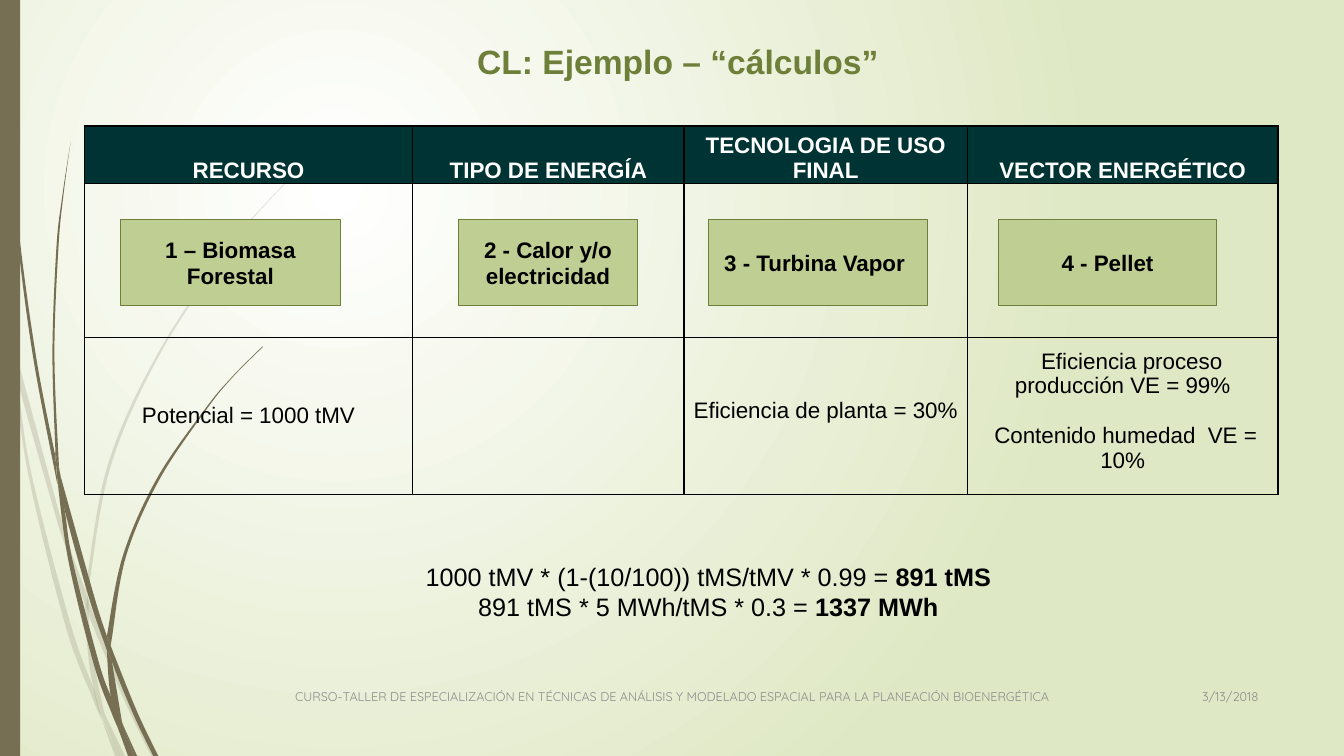
from collections import namedtuple
from dataclasses import dataclass

from lxml.etree import SubElement
from pptx import Presentation
from pptx.dml.color import RGBColor
from pptx.enum.shapes import MSO_SHAPE
from pptx.enum.text import MSO_ANCHOR, PP_ALIGN
from pptx.oxml import parse_xml
from pptx.oxml.ns import nsdecls, qn
from pptx.util import Inches, Pt

Box = namedtuple("Box", "left top width height")


@dataclass(frozen=True)
class Theme:
    white: str = "FFFFFF"
    black: str = "000000"
    mist: str = "DFE8C4"
    bark: str = "766F54"
    header: str = "003333"
    leaf: str = "BFCE92"
    olive: str = "6D7F39"
    gray: str = "8C8C8C"
    font: str = "Arial"
    footer_font: str = "Quicksand"
    title_size: int = 24
    formula_size: int = 18
    body_size: int = 16
    footer_size: int = 9


THEME = Theme()

# Grass pieces: the two curved edges of each, in drawing order
PALE_GRASS = [
    ([(0.11, 3.5), (0.09, 3.22), (0, 2.82)], [(0, 2.99), (0.1, 3.44)]),
    ([(0.58, 5.22), (0.84, 5.99)], [(0.85, 5.86), (0.62, 5.2), (0.14, 3.45), (0.17, 3.76), (0.58, 5.22)]),
    ([(0.88, 5.96), (0.88, 6.1), (1.23, 6.94), (1.5, 7.5)], [(1.55, 7.5), (1.27, 6.92), (0.92, 6.07)]),
    ([(1.19, 7.5), (1.24, 7.5)], [(1.05, 7.11)]),
    ([(0.93, 6.83), (0.7, 6.19), (0.31, 4.69), (0.17, 3.76), (0.11, 3.5)],
     [(0.11, 3.5), (0.28, 4.7), (0.65, 6.21), (0.92, 6.93), (1.01, 7.14)]),
    ([(0.84, 5.99), (0.87, 6.46), (0.93, 6.83), (1.05, 7.11)], [(1.03, 7.06), (0.91, 6.46), (0.88, 6.1)]),
    ([(0.88, 5.96), (0.88, 5.84), (1.1, 4.62), (1.6, 3.49), (2.29, 2.45), (2.68, 1.98), (3.12, 1.54)],
     [(3.12, 1.53), (2.68, 1.97), (2.28, 2.44), (1.58, 3.48), (1.07, 4.61), (0.85, 5.84)]),
    ([(1.01, 7.14), (1.14, 7.5)], [(1.19, 7.5)]),
    ([(0.88, 6.08), (0.88, 5.96)], [(0.85, 5.86), (0.84, 5.99)]),
    ([(0.96, 6.92), (0.93, 6.83), (0.99, 7.07), (1.19, 7.5)], [(1.19, 7.5), (1.05, 7.11)]),
]
DARK_GRASS = [
    ([(0.03, 0), (0.07, 1.1), (0.17, 2.33), (0.33, 3.55), (0.57, 4.81)],
     [(0.55, 4.53), (0.36, 3.55), (0.19, 2.32), (0.08, 1.09), (0.04, 0)]),
    ([(0.6, 4.72), (0.64, 5.05), (0.88, 5.92), (1.06, 6.45)], [(1.06, 6.31), (0.93, 5.9), (0.6, 4.72)]),
    ([(1.1, 6.41), (1.11, 6.56), (1.32, 7.08), (1.52, 7.5)], [(1.57, 7.5), (1.36, 7.06), (1.13, 6.49)]),
    ([(1.1, 6.91), (0.98, 6.57), (0.72, 5.56), (0.64, 5.05), (0.57, 4.77)],
     [(0.57, 4.77), (0.68, 5.57), (0.93, 6.59), (1.11, 7.08), (1.17, 7.22)]),
    ([(0.6, 4.72), (0.58, 4.53), (0.54, 3.49), (0.58, 2.45), (0.63, 1.93), (0.7, 1.41)],
     [(0.7, 1.41), (0.62, 1.93), (0.56, 2.45), (0.52, 3.49), (0.55, 4.49)]),
    ([(1.33, 7.5), (1.36, 7.5)], [(1.22, 7.19)]),
    ([(0.57, 4.77), (0.64, 5.05)], [(0.6, 4.72), (0.55, 4.49), (0.55, 4.53)]),
    ([(1.1, 6.41), (1.11, 6.33), (1.25, 5.52), (1.58, 4.76), (2.05, 4.06), (2.31, 3.74), (2.61, 3.44)],
     [(2.6, 3.44), (2.31, 3.73), (2.04, 4.05), (1.56, 4.74), (1.22, 5.51), (1.06, 6.31)]),
    ([(1.17, 7.22), (1.27, 7.5)], [(1.31, 7.5)]),
    ([(1.06, 6.45), (1.1, 6.91), (1.22, 7.19)], [(1.21, 7.16), (1.11, 6.56)]),
    ([(1.06, 6.45), (1.11, 6.56)], [(1.1, 6.41), (1.06, 6.31)]),
    ([(1.16, 7.06), (1.1, 6.91), (1.17, 7.22), (1.3, 7.5)], [(1.33, 7.5), (1.22, 7.19)]),
]

ROW_HEIGHTS = [0.57, 1.53, 1.56]
# Width, header and paragraphs (text, first-line indent) of each column
COLUMNS = [
    (3.26, "RECURSO", [("Potencial = 1000 tMV", 0)]),
    (2.69, "TIPO DE ENERGÍA", []),
    (2.81, "TECNOLOGIA DE USO FINAL", [("Eficiencia de planta = 30%", 0)]),
    (3.08, "VECTOR ENERGÉTICO", [("Eficiencia proceso producción VE = 99%", 0.18),
                                 ("Contenido humedad  VE = 10%", 0.06)]),
]
# Label, offset from the table's left edge and width of each step
STEPS = [("1 – Biomasa Forestal", 0.36, 2.18), ("2 - Calor y/o electricidad", 3.71, 1.78),
         ("3 - Turbina Vapor ", 6.19, 2.17), ("4 - Pellet", 9.07, 2.16)]
FORMULAS = [("1000 tMV * (1-(10/100)) tMS/tMV * 0.99 = ", "891 tMS"),
            ("891 tMS * 5 MWh/tMS * 0.3 = ", "1337 MWh")]


def inches(box):
    return [Inches(value) for value in box]


def write(paragraph, text, size, ink=THEME.black, bold=False, name=THEME.font, align=PP_ALIGN.CENTER):
    paragraph.alignment = align
    run = paragraph.add_run()
    run.text = text
    for attribute, value in {"size": Pt(size), "bold": bold, "name": name}.items():
        setattr(run.font, attribute, value)
    run.font.color.rgb = RGBColor.from_string(ink)


def next_paragraph(frame, position):
    return frame.add_paragraph() if position else frame.paragraphs[0]


def paint(shape, fill, line=None, alpha=None):
    shape.shadow.inherit = False
    shape.fill.solid()
    shape.fill.fore_color.rgb = RGBColor.from_string(fill)
    if alpha:
        SubElement(shape.fill._xPr.find(".//" + qn("a:srgbClr")), qn("a:alpha"), val=str(alpha * 1000))
    if line:
        shape.line.color.rgb = RGBColor.from_string(line)
        shape.line.width = Pt(0.75)
    else:
        shape.line.fill.background()


def add_background(slide):
    fill = slide.background.fill
    fill.gradient()
    for stop, value in zip(fill.gradient_stops, (THEME.white, THEME.mist)):
        stop.color.rgb = RGBColor.from_string(value)
    linear = slide.background._cSld.find(".//" + qn("a:lin"))
    linear.getparent().replace(linear, parse_xml(
        f'<a:path {nsdecls("a")} path="circle">'
        '<a:fillToRect l="50000" t="50000" r="100000" b="100000"/></a:path>'))


def bend(shape, edges):
    """Turn the straight segments along each edge into Bezier curves."""
    segments = list(shape._element.iter(qn("a:moveTo"), qn("a:lnTo")))
    points = [(int(s[0].get("x")), int(s[0].get("y"))) for s in segments]
    start = 0
    for edge in edges:
        last = start + len(edge) - 1
        for i in range(start + 1, last + 1):
            before, a, b, after = (points[k] for k in (max(i - 2, start), i - 1, i, min(i + 1, last)))
            first = [p + (r - q) / 6 for p, q, r in zip(a, before, b)]
            second = [p - (r - q) / 6 for p, q, r in zip(b, a, after)]
            curve = SubElement(segments[i].getparent(), qn("a:cubicBezTo"))
            for x, y in (first, second, b):
                SubElement(curve, qn("a:pt"), x=str(round(x)), y=str(round(y)))
            segments[i].getparent().replace(segments[i], curve)
        start = last + 1


def add_grass(slide, box):
    for pieces, alpha in ((PALE_GRASS, 20), (DARK_GRASS, None)):
        for edges in pieces:
            outline = [(Inches(box.left + x), Inches(box.top + y)) for edge in edges for x, y in edge]
            builder = slide.shapes.build_freeform(*outline[0])
            builder.add_line_segments(outline[1:], close=True)
            piece = builder.convert_to_shape()
            bend(piece, edges)
            paint(piece, THEME.bark, alpha=alpha)
    bar = slide.shapes.add_shape(MSO_SHAPE.RECTANGLE, *inches(box._replace(width=0.2)))
    paint(bar, THEME.bark)


def add_title(slide, box):
    title = slide.shapes.title
    for attribute, value in zip(box._fields, inches(box)):
        setattr(title, attribute, value)
    title.text_frame.vertical_anchor = MSO_ANCHOR.BOTTOM
    write(title.text_frame.paragraphs[0], "CL: Ejemplo – “cálculos” ", THEME.title_size, THEME.olive, True)


def format_cell(cell, fill=None, anchor=MSO_ANCHOR.MIDDLE, bottom=0):
    formats = {"margin_left": Inches(0.05), "margin_right": Inches(0.05), "margin_top": 0,
               "margin_bottom": Inches(bottom), "vertical_anchor": anchor}
    for attribute, value in formats.items():
        setattr(cell, attribute, value)
    cell.fill.background()
    if fill:
        cell.fill.solid()
        cell.fill.fore_color.rgb = RGBColor.from_string(fill)
    for index, side in enumerate("LRTB"):
        cell._tc.get_or_add_tcPr().insert(index, parse_xml(
            f'<a:ln{side} {nsdecls("a")} w="12700"><a:solidFill>'
            f'<a:srgbClr val="{THEME.black}"/></a:solidFill></a:ln{side}>'))


def add_energy_table(slide, box):
    table = slide.shapes.add_table(len(ROW_HEIGHTS), len(COLUMNS), *inches(box)).table
    table.first_row = table.horz_banding = False
    for row, height in zip(table.rows, ROW_HEIGHTS):
        row.height = Inches(height)
    for index, (width, header, entries) in enumerate(COLUMNS):
        table.columns[index].width = Inches(width)
        top, middle, bottom = (table.cell(row, index) for row in range(3))
        format_cell(top, THEME.header, MSO_ANCHOR.BOTTOM)
        format_cell(middle)
        format_cell(bottom, bottom=0.1 if index else 0)
        write(top.text_frame.paragraphs[0], header, THEME.body_size, THEME.white, True)
        for position, (text, indent) in enumerate(entries):
            paragraph = next_paragraph(bottom.text_frame, position)
            paragraph.space_before = Pt(18 if position else 0)
            paragraph._p.get_or_add_pPr().set("indent", str(Inches(indent)))
            write(paragraph, text, THEME.body_size)
    # Step boxes over the middle row
    for label, offset, width in STEPS:
        step = slide.shapes.add_shape(
            MSO_SHAPE.RECTANGLE, *inches(Box(box.left + offset, box.top + 0.93, width, 0.85)))
        paint(step, THEME.leaf, THEME.olive)
        step.text_frame.vertical_anchor = MSO_ANCHOR.MIDDLE
        write(step.text_frame.paragraphs[0], label, THEME.body_size, bold=True)


def add_formulas(slide, box):
    frame = slide.shapes.add_textbox(*inches(box)).text_frame
    frame.word_wrap = True
    for position, (expression, result) in enumerate(FORMULAS):
        paragraph = next_paragraph(frame, position)
        write(paragraph, expression, THEME.formula_size)
        write(paragraph, result, THEME.formula_size, bold=True)


def add_footer(slide, box):
    course = ("CURSO-TALLER DE ESPECIALIZACIÓN EN TÉCNICAS DE ANÁLISIS Y MODELADO "
              "ESPACIAL PARA LA PLANEACIÓN BIOENERGÉTICA")
    date_box = box._replace(left=box.left + box.width - 1.25, width=1.25)
    for text, area, align in (("3/13/2018", date_box, PP_ALIGN.RIGHT),
                              (course, box._replace(width=8.33), PP_ALIGN.LEFT)):
        frame = slide.shapes.add_textbox(*inches(area)).text_frame
        frame.word_wrap = True
        frame.vertical_anchor = MSO_ANCHOR.MIDDLE
        write(frame.paragraphs[0], text, THEME.footer_size, THEME.gray, name=THEME.footer_font, align=align)


presentation = Presentation()
presentation.slide_width, presentation.slide_height = Inches(13.33), Inches(7.5)
slide = presentation.slides.add_slide(presentation.slide_layouts[5])
add_background(slide)
add_grass(slide, Box(0, 0, 3.12, 7.5))
add_title(slide, Box(0.21, 0.17, 13.12, 0.69))
add_energy_table(slide, Box(0.835, 1.25, 11.84, sum(ROW_HEIGHTS)))
add_formulas(slide, Box(3.69, 5.52, 6.67, 0.71))
add_footer(slide, Box(2.83, 6.7, 9.75, 0.41))
presentation.save("out.pptx")
